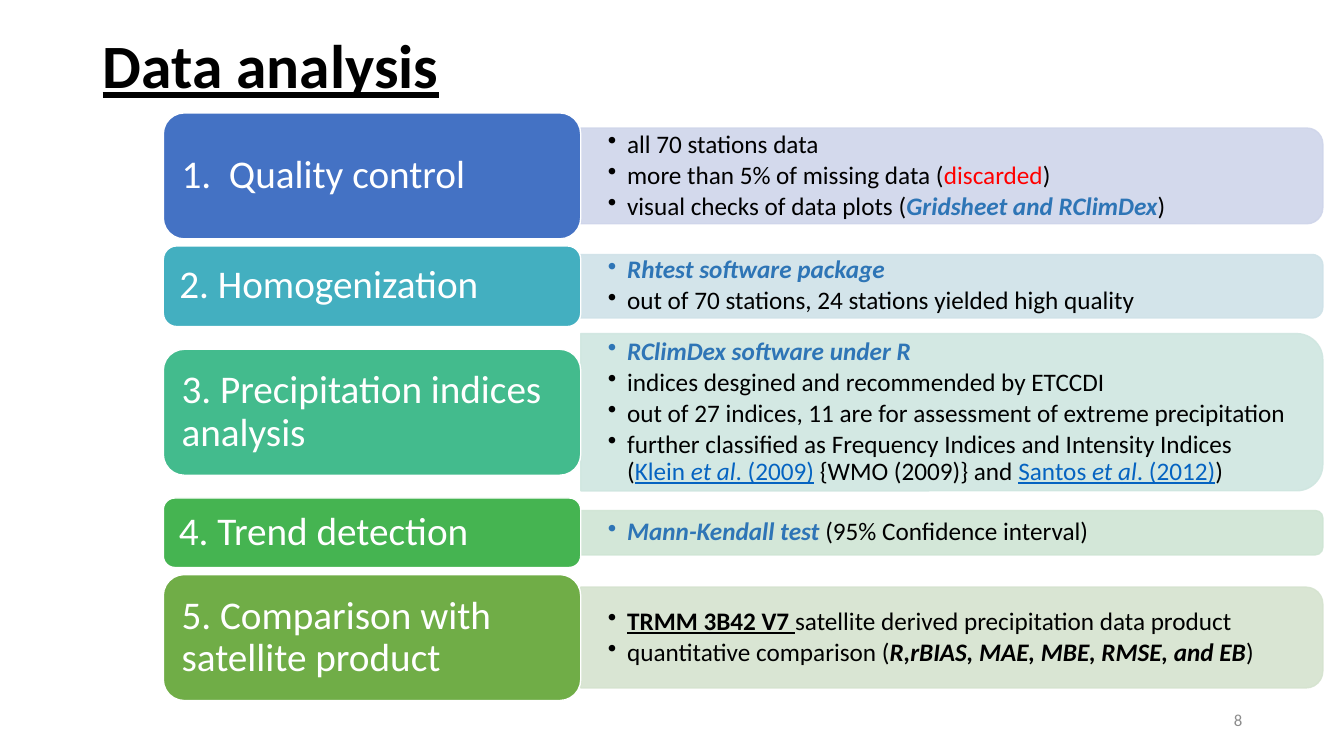
from lxml import etree
from pptx import Presentation
from pptx.dml.color import RGBColor
from pptx.enum.shapes import MSO_SHAPE
from pptx.enum.text import MSO_ANCHOR, PP_ALIGN
from pptx.oxml.ns import qn
from pptx.util import Inches, Pt

ROUNDED = MSO_SHAPE.ROUNDED_RECTANGLE
ROUNDED_TOP = MSO_SHAPE.ROUND_2_SAME_RECTANGLE
MIDDLE = MSO_ANCHOR.MIDDLE
LEFT, RIGHT = PP_ALIGN.LEFT, PP_ALIGN.RIGHT

THEME = {
    "font": "Calibri",
    "title_size": 44, "label_size": 28, "body_size": 18, "number_size": 12,
    "black": "000000", "white": "FFFFFF", "grey": "8C8C8C",
    "red": "FF0000", "blue": "2E75B6", "link": "0563C1",
}

STYLES = {
    "plain": ("black", ""),
    "alert": ("red", ""),
    "tool": ("blue", "bi"),
    "cite": ("link", "u"),
    "cite_italic": ("link", "iu"),
    "product": ("black", "bu"),
    "metrics": ("black", "bi"),
}

STEPS = [
    ("1.  Quality control", 1.25, 0.95, "4472C4", "CFD5EA", [
        [("all 70 stations data", "plain")],
        [("more than 5% of missing data (", "plain"), ("discarded", "alert"), (")", "plain")],
        [("visual checks of data plots (", "plain"),
         ("Gridsheet and RClimDex", "tool"), (")", "plain")],
    ]),
    ("2. Homogenization", 0.8, 0.63, "43AFC0", "CFE2E8", [
        [("Rhtest software package", "tool")],
        [("out of 70 stations, 24 stations yielded high quality", "plain")],
    ]),
    ("3. Precipitation indices analysis", 1.25, 1.56, "43BB8D", "CFE6E0", [
        [("RClimDex software under R", "tool")],
        [("indices desgined and recommended by ETCCDI", "plain")],
        [("out of 27 indices, 11 are for assessment of extreme precipitation", "plain")],
        [("further classified as Frequency Indices and Intensity Indices (", "plain"),
         ("Klein ", "cite"), ("et al", "cite_italic"), (". (2009)", "cite"),
         (" {WMO (2009)} and ", "plain"),
         ("Santos ", "cite"), ("et al", "cite_italic"), (". (2012)", "cite"), (")", "plain")],
    ]),
    ("4. Trend detection", 0.69, 0.44, "45B451", "CFE5D4", [
        [("Mann-Kendall test ", "tool"), ("(95% Confidence interval)", "plain")],
    ]),
    ("5. Comparison with satellite product", 1.25, 1, "70AD47", "D5E3CF", [
        [("TRMM 3B42 V7 ", "product"), ("satellite derived precipitation data product", "plain")],
        [("quantitative comparison (", "plain"),
         ("R,rBIAS, MAE, MBE, RMSE, and EB", "metrics"), (")", "plain")],
    ]),
]

LABEL_LEFT, LABEL_WIDTH = 1.62, 4.14
PANEL_LEFT, PANEL_WIDTH = LABEL_LEFT + LABEL_WIDTH, 7.36
FIRST_TOP, GAP = 1.12, 0.07


def add_run(p, text, size, colour, marks=""):
    r = p.add_run()
    r.text = text
    r.font.name = THEME["font"]
    r.font.size = Pt(THEME[size])
    r.font.color.rgb = RGBColor.from_string(THEME[colour])
    r.font.bold = "b" in marks
    r.font.italic = "i" in marks
    r.font.underline = "u" in marks


def add_box(s, kind, left, top, width, height, fill, line):
    sp = s.shapes.add_shape(kind, Inches(left), Inches(top), Inches(width), Inches(height))
    sp.shadow.inherit = False
    sp.fill.solid()
    sp.fill.fore_color.rgb = RGBColor.from_string(fill)
    sp.line.color.rgb = RGBColor.from_string(line)
    sp.line.width = Pt(1)
    return sp


prs = Presentation()
prs.slide_width, prs.slide_height = Inches(13.33), Inches(7.5)
s = prs.slides.add_slide(prs.slide_layouts[6])

for text, left, top, width, height, size, colour, marks, align in [
    ("Data analysis", 0.92, 0.21, 11.5, 0.94, "title_size", "black", "bu", LEFT),
    ("8", 9.42, 6.95, 3, 0.4, "number_size", "grey", "", RIGHT),
]:
    tf = s.shapes.add_textbox(Inches(left), Inches(top), Inches(width), Inches(height)).text_frame
    tf.word_wrap = True
    tf.vertical_anchor = MIDDLE
    p = tf.paragraphs[0]
    p.alignment = align
    p.line_spacing = 0.9
    add_run(p, text, size, colour, marks)

top = FIRST_TOP
for label, label_height, panel_height, label_fill, panel_fill, bullets in STEPS:
    row_height = max(label_height, panel_height)
    middle = top + row_height / 2

    panel = add_box(s, ROUNDED_TOP, PANEL_LEFT + (PANEL_WIDTH - panel_height) / 2,
                    middle - PANEL_WIDTH / 2, panel_height, PANEL_WIDTH, panel_fill, panel_fill)
    panel.rotation = 90
    for colour in panel._element.spPr.iter(qn("a:srgbClr")):
        etree.SubElement(colour, qn("a:alpha"), val="90000")

    text_width = PANEL_WIDTH - 0.05 * panel_height
    text_height = 0.9 * panel_height
    tf = s.shapes.add_textbox(Inches(PANEL_LEFT), Inches(middle - text_height / 2),
                              Inches(text_width), Inches(text_height)).text_frame
    tf.word_wrap = True
    tf.vertical_anchor = MIDDLE
    tf.margin_left = tf.margin_right = Inches(0.27)
    tf.margin_top = tf.margin_bottom = Inches(0.14)
    for i, runs in enumerate(bullets):
        p = tf.add_paragraph() if i else tf.paragraphs[0]
        p.line_spacing = 0.9
        p.space_after = Pt(2.7)
        pPr = p._p.get_or_add_pPr()
        pPr.set("marL", str(Inches(0.19)))
        pPr.set("indent", str(-Inches(0.19)))
        etree.SubElement(pPr, qn("a:buChar"), char="•")
        for text, style in runs:
            add_run(p, text, "body_size", *STYLES[style])

    sp = add_box(s, ROUNDED, LABEL_LEFT, middle - label_height / 2,
                 LABEL_WIDTH, label_height, label_fill, THEME["white"])
    tf = sp.text_frame
    tf.word_wrap = True
    tf.vertical_anchor = MIDDLE
    tf.margin_left = tf.margin_right = Inches(0.12)
    tf.margin_top = tf.margin_bottom = Inches(0.06)
    p = tf.paragraphs[0]
    p.alignment = LEFT
    p.line_spacing = 0.9
    add_run(p, label, "label_size", "white")

    top += row_height + GAP

prs.save("out.pptx")
